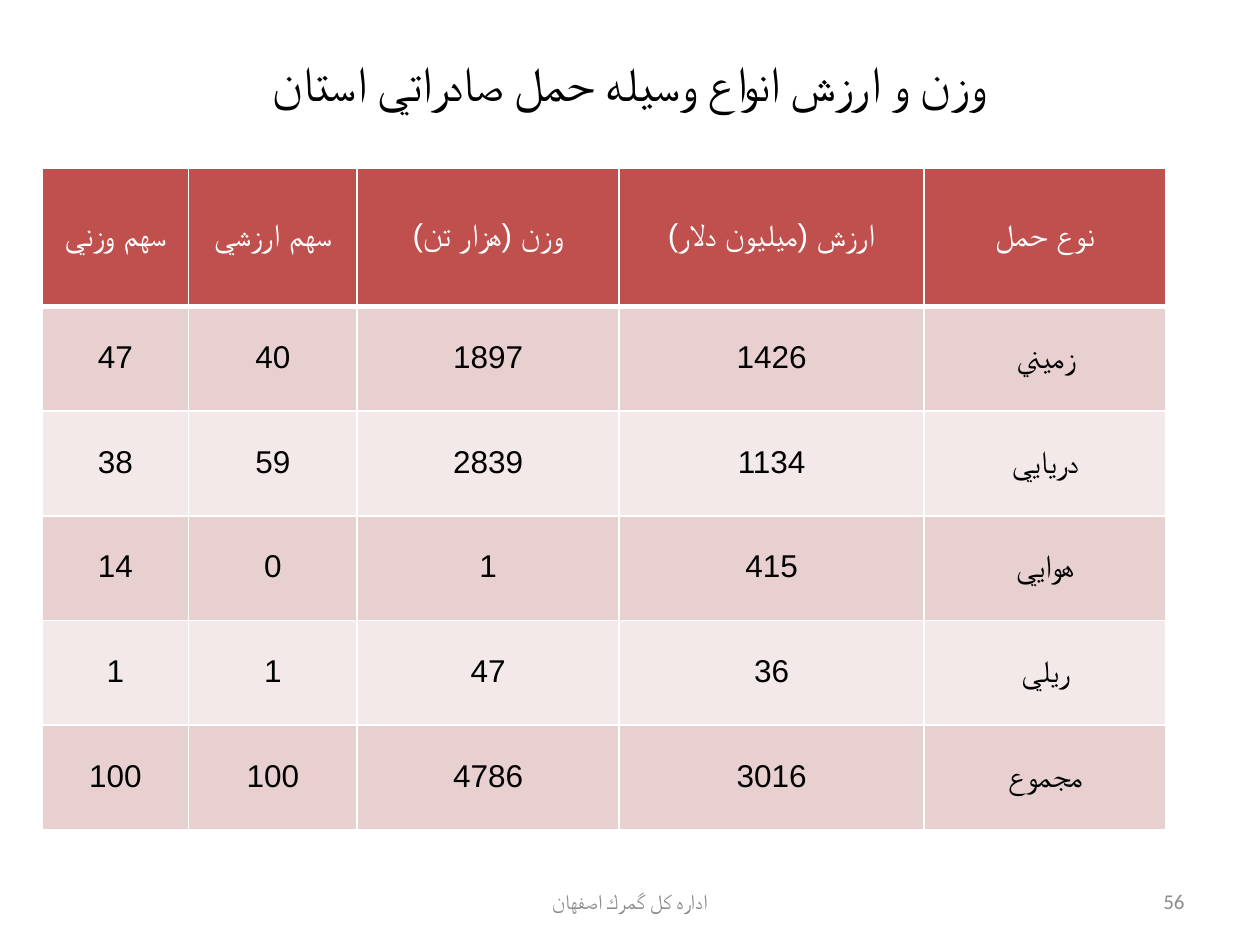
from lxml import etree
from pptx import Presentation
from pptx.dml.color import RGBColor
from pptx.enum.text import MSO_ANCHOR, PP_ALIGN
from pptx.oxml.ns import qn
from pptx.util import Cm, Pt

CENTER, RIGHT = PP_ALIGN.CENTER, PP_ALIGN.RIGHT
MIDDLE = MSO_ANCHOR.MIDDLE

BLACK = RGBColor(0x00, 0x00, 0x00)
WHITE = RGBColor(0xFF, 0xFF, 0xFF)
GREY = RGBColor(0x8C, 0x8C, 0x8C)
RED = RGBColor(0xC0, 0x50, 0x4D)
BANDS = [RGBColor(0xE8, 0xD0, 0xD0), RGBColor(0xF4, 0xE9, 0xE9)]

TITLE_FONT = {"name": "Calibri", "size": Pt(28)}
TABLE_FONT = {"name": "Arial", "size": Pt(18)}
FOOTER_FONT = {"name": "Calibri", "size": Pt(12)}

COL_WIDTHS = [2.95, 3.4, 5.28, 6.15, 4.88]
HEADER_HEIGHT, ROW_HEIGHT = 2.79, 2.11
ROWS = [
    ["سهم وزني", "سهم ارزشي", "وزن (هزار تن)", "ارزش (ميليون دلار)", "نوع حمل"],
    ["47", "40", "1897", "1426", "زميني"],
    ["38", "59", "2839", "1134", "دريايي"],
    ["14", "0", "1", "415", "هوايي"],
    ["1", "1", "47", "36", "ريلي"],
    ["100", "100", "4786", "3016", "مجموع"],
]


def write(tf, text, font, color, align=CENTER, rtl=True):
    p = tf.paragraphs[0]
    p.alignment = align
    if rtl:
        p._p.get_or_add_pPr().set("rtl", "1")
    r = p.add_run()
    r.text = text
    for key, value in font.items():
        setattr(r.font, key, value)
    r.font.color.rgb = color
    # Arabic letters take the complex-script typeface
    etree.SubElement(r._r.get_or_add_rPr(), qn("a:cs"), typeface=font["name"])
    return p


def add_text(s, box, text, font, color, **layout):
    tf = s.shapes.add_textbox(*map(Cm, box)).text_frame
    tf.word_wrap = True
    tf.vertical_anchor = MIDDLE
    write(tf, text, font, color, **layout)


def set_borders(cell, widths):
    tc_pr = cell._tc.get_or_add_tcPr()
    for i, (side, width) in enumerate(widths.items()):
        ln = etree.Element(qn(f"a:ln{side}"), w=str(Pt(width)))
        fill = etree.SubElement(ln, qn("a:solidFill"))
        etree.SubElement(fill, qn("a:srgbClr"), val=str(WHITE))
        tc_pr.insert(i, ln)


def add_transport_table(s, left, top):
    width = sum(COL_WIDTHS)
    height = HEADER_HEIGHT + ROW_HEIGHT * (len(ROWS) - 1)
    table = s.shapes.add_table(len(ROWS), len(COL_WIDTHS), Cm(left), Cm(top),
                               Cm(width), Cm(height)).table
    for col, col_width in zip(table.columns, COL_WIDTHS):
        col.width = Cm(col_width)
    for i, values in enumerate(ROWS):
        header = i == 0
        table.rows[i].height = Cm(HEADER_HEIGHT if header else ROW_HEIGHT)
        # A thick rule parts the header from the body
        borders = {"L": 1, "R": 1, "T": 3 if i == 1 else 1, "B": 3 if header else 1}
        for j, text in enumerate(values):
            cell = table.cell(i, j)
            cell.vertical_anchor = MIDDLE
            cell.fill.solid()
            cell.fill.fore_color.rgb = RED if header else BANDS[(i - 1) % 2]
            set_borders(cell, borders)
            p = write(cell.text_frame, text, TABLE_FONT, WHITE if header else BLACK)
            p.line_spacing = 0.9


def add_footer(s, left, top, width, height):
    # Page number at the right edge, office name in the middle
    number_width, name_width = 5.92, 8.05
    add_text(s, (left + width - number_width, top, number_width, height),
             "56", FOOTER_FONT, GREY, align=RIGHT, rtl=False)
    add_text(s, (left + (width - name_width) / 2, top, name_width, height),
             "اداره كل گمرك اصفهان", FOOTER_FONT, GREY, rtl=False)


def main():
    prs = Presentation()
    prs.slide_width, prs.slide_height = Cm(25.4), Cm(19.05)
    s = prs.slides.add_slide(prs.slide_layouts[6])
    add_text(s, (1.27, 0.76, 22.86, 1.78),
             "وزن و ارزش انواع وسيله حمل صادراتي استان", TITLE_FONT, BLACK)
    add_transport_table(s, 0.85, 3.39)
    add_footer(s, 1.27, 17.65, 22.86, 1.02)
    prs.save("out.pptx")


if __name__ == "__main__":
    main()
